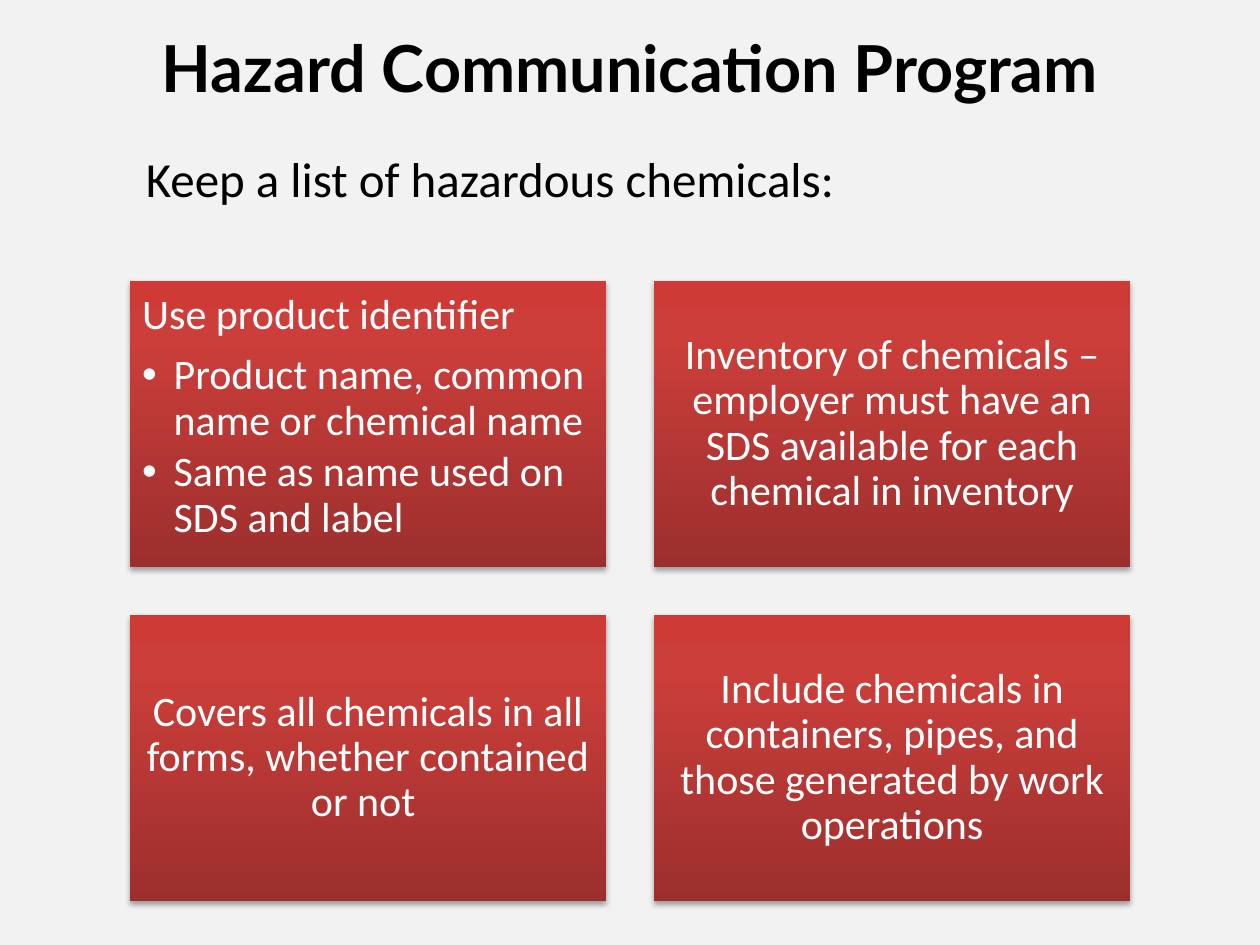
from pptx import Presentation, util as u
from pptx.dml.color import RGBColor
from pptx.enum import shapes, text
from pptx.oxml import parse_xml
from pptx.oxml.ns import nsdecls, qn

COLORS = {"background": "F2F2F2", "ink": "000000", "white": "FFFFFF",
          "dark": "9C2F2D", "middle": "CB3E3A", "light": "CE3B37"}
WIDTH, HEIGHT = 10, 7.5
LEFT, TOP = 1.03, 2.23
CARD_WIDTH, CARD_HEIGHT, GAP = 3.78, 2.27, 0.38

presentation = Presentation()
presentation.slide_width, presentation.slide_height = u.Inches(WIDTH), u.Inches(HEIGHT)
slide = presentation.slides.add_slide(presentation.slide_layouts[6])
slide.background.fill.solid()
slide.background.fill.fore_color.rgb = RGBColor.from_string(COLORS["background"])


def add_run(paragraph, words, size, color, font="Calibri", bold=False):
    run = paragraph.add_run()
    run.text = words
    run.font.name, run.font.size, run.font.bold = font, u.Pt(size), bold
    run.font.color.rgb = RGBColor.from_string(COLORS[color])


LABELS = [
    ((0.5, 0.17, 9, 1.25), "Hazard Communication Program", 37, "Lato", True, "CENTER", 0),
    ((1, 1.13, 5.83, 0.57), "Keep a list of hazardous chemicals:", 28, "Calibri", False, "LEFT", 0.06),
]
for place, words, size, font, bold, align, indent in LABELS:
    box = slide.shapes.add_textbox(*map(u.Inches, place))
    box.text_frame.word_wrap = True
    paragraph = box.text_frame.paragraphs[0]
    paragraph.alignment = getattr(text.PP_ALIGN, align)
    paragraph._p.get_or_add_pPr().set("marL", str(u.Inches(indent)))
    add_run(paragraph, words, size, "ink", font, bold)

CARDS = [
    ["Use product identifier", "Product name, common name or chemical name",
     "Same as name used on SDS and label"],
    ["Inventory of chemicals – employer must have an SDS available for each chemical in inventory"],
    ["Covers all chemicals in all forms, whether contained or not "],
    ["Include chemicals in containers, pipes, and those generated by work operations"],
]
STOPS = "".join(f'<a:gs pos="{share * 1000}"><a:srgbClr val="{COLORS[name]}"/></a:gs>'
                for share, name in [(0, "dark"), (80, "middle"), (100, "light")])
SHADOW = (f'<a:effectLst {nsdecls("a")}><a:outerShdw blurRad="{u.Pt(3.1)}" dist="{u.Pt(1.8)}" '
          'dir="5400000" rotWithShape="0"><a:srgbClr val="000000"><a:alpha val="35000"/>'
          '</a:srgbClr></a:outerShdw></a:effectLst>')

for index, lines in enumerate(CARDS):
    row, column = divmod(index, 2)
    card = slide.shapes.add_shape(
        shapes.MSO_SHAPE.RECTANGLE,
        u.Inches(LEFT + column * (CARD_WIDTH + GAP)), u.Inches(TOP + row * (CARD_HEIGHT + GAP)),
        u.Inches(CARD_WIDTH), u.Inches(CARD_HEIGHT))
    card.fill.gradient()
    card.fill.gradient_angle = 90
    stop_list = card._element.spPr.find(".//" + qn("a:gsLst"))
    stop_list.getparent().replace(stop_list, parse_xml(f'<a:gsLst {nsdecls("a")}>{STOPS}</a:gsLst>'))
    card.line.fill.background()
    card._element.spPr.append(parse_xml(SHADOW))

    has_bullets = len(lines) > 1
    frame = card.text_frame
    frame.word_wrap = True
    frame.margin_left = frame.margin_right = frame.margin_top = frame.margin_bottom = u.Inches(0.1)
    frame.vertical_anchor = text.MSO_ANCHOR.TOP if has_bullets else text.MSO_ANCHOR.MIDDLE
    for number, words in enumerate(lines):
        paragraph = frame.add_paragraph() if number else frame.paragraphs[0]
        paragraph.alignment = text.PP_ALIGN.LEFT if has_bullets else text.PP_ALIGN.CENTER
        paragraph.line_spacing = 0.9
        paragraph.space_after = u.Pt(3.6 if number else 8.4)
        if number:
            paragraph.level = 1
            properties = paragraph._p.get_or_add_pPr()
            properties.set("marL", str(u.Inches(0.25)))
            properties.set("indent", str(u.Inches(-0.25)))
            properties.append(parse_xml(f'<a:buFont {nsdecls("a")} typeface="Arial"/>'))
            properties.append(parse_xml(f'<a:buChar {nsdecls("a")} char="•"/>'))
        add_run(paragraph, words, 24, "white")

presentation.save("out.pptx")
